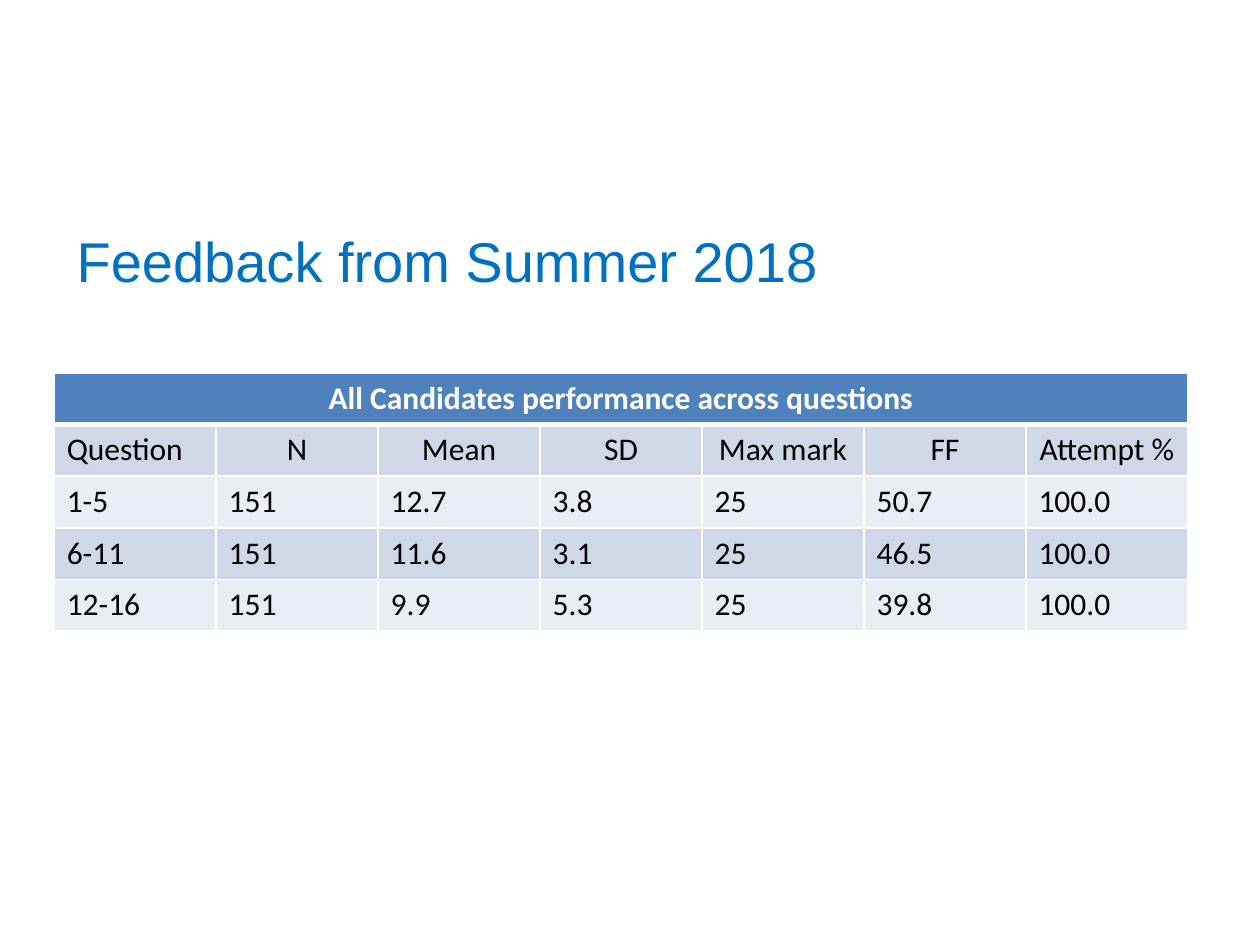
from dataclasses import dataclass

from lxml import etree
from pptx import Presentation
from pptx import util as u
from pptx.dml.color import RGBColor
from pptx.enum import text
from pptx.oxml.ns import qn


@dataclass(frozen=True)
class Theme:
    title_font: str = "Arial"
    table_font: str = "Calibri"
    title_size: int = 32
    table_size: int = 18
    title: str = "0070C0"
    header: str = "4F81BD"
    bands: tuple = ("D0D8E8", "E9EDF4")
    ink: str = "000000"
    white: str = "FFFFFF"
    rule: int = 1
    header_rule: int = 3


class SlideBuilder:
    def __init__(self, page, theme):
        self.page = page
        self.theme = theme

    def style(self, para, font, size, color, bold=False):
        para.font.name = font
        para.font.size = u.Pt(size)
        para.font.bold = bold
        para.font.color.rgb = RGBColor.from_string(color)

    def title(self, words, left, top, width, height):
        box = self.page.shapes.add_textbox(*map(u.Inches, (left, top, width, height)))
        frame = box.text_frame
        frame.word_wrap = True
        frame.margin_top = u.Inches(0.1)
        para = frame.paragraphs[0]
        para.text = words
        self.style(para, self.theme.title_font, self.theme.title_size, self.theme.title)

    def borders(self, cell, top, bottom):
        properties = cell._tc.get_or_add_tcPr()
        rule = self.theme.rule
        for side, width in (("L", rule), ("R", rule), ("T", top), ("B", bottom)):
            line = etree.SubElement(properties, qn(f"a:ln{side}"), w=str(u.Pt(width)))
            fill = etree.SubElement(line, qn("a:solidFill"))
            etree.SubElement(fill, qn("a:srgbClr"), val=self.theme.white)

    def cell(self, cell, words, fill, color, centred, bold, top, bottom):
        self.borders(cell, top, bottom)
        cell.fill.solid()
        cell.fill.fore_color.rgb = RGBColor.from_string(fill)
        para = cell.text_frame.paragraphs[0]
        para.text = words
        para.alignment = text.PP_ALIGN.CENTER if centred else text.PP_ALIGN.LEFT
        self.style(para, self.theme.table_font, self.theme.table_size, color, bold)

    def table(self, heading, rows, left, top, width, row_height):
        theme = self.theme
        columns = len(rows[0])
        count = len(rows) + 1
        grid = self.page.shapes.add_table(
            count, columns, u.Inches(left), u.Inches(top),
            u.Inches(width), u.Inches(row_height * count)).table
        for column in grid.columns:
            column.width = u.Inches(width / columns)
        for row in grid.rows:
            row.height = u.Inches(row_height)
        grid.cell(0, 0).merge(grid.cell(0, columns - 1))
        self.cell(grid.cell(0, 0), heading, theme.header, theme.white,
                  True, True, theme.rule, theme.header_rule)
        for r, values in enumerate(rows):
            top_rule = theme.header_rule if r == 0 else theme.rule
            for c, value in enumerate(values):
                self.cell(grid.cell(r + 1, c), value, theme.bands[r % 2], theme.ink,
                          r == 0 and c > 0, False, top_rule, theme.rule)


def main():
    deck = Presentation()
    deck.slide_width, deck.slide_height = u.Inches(10), u.Inches(7.5)
    page = deck.slides.add_slide(deck.slide_layouts[6])
    builder = SlideBuilder(page, Theme())
    builder.title("Feedback from Summer 2018", 0.51, 1.7, 9.21, 1.3)
    builder.table(
        "All Candidates performance across questions",
        [
            ("Question", "N", "Mean", "SD", "Max mark", "FF", "Attempt %"),
            ("1-5", "151", "12.7", "3.8", "25", "50.7", "100.0"),
            ("6-11", "151", "11.6", "3.1", "25", "46.5", "100.0"),
            ("12-16", "151", "9.9", "5.3", "25", "39.8", "100.0"),
        ],
        0.43, 2.96, 9, 0.41)
    deck.save("out.pptx")


if __name__ == "__main__":
    main()
